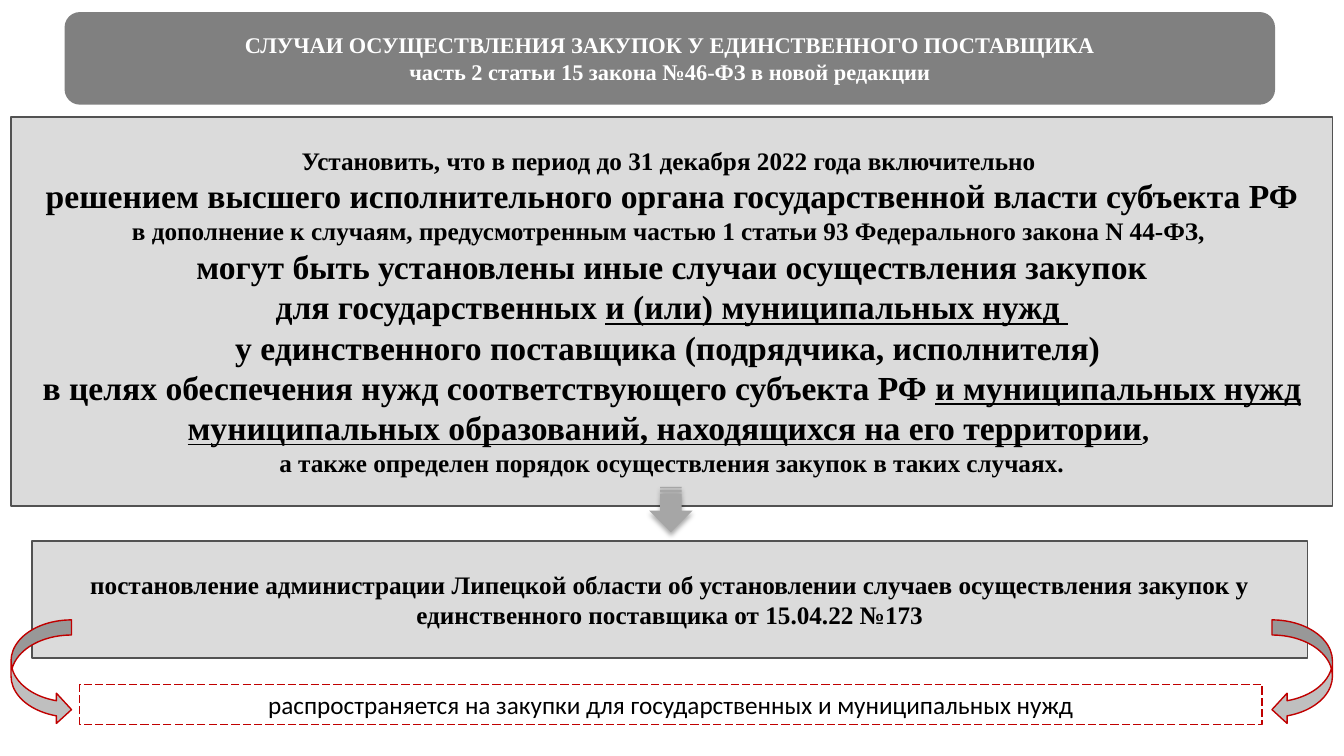
from lxml.etree import SubElement
from pptx import Presentation
from pptx.dml.color import RGBColor
from pptx.enum.dml import MSO_LINE
from pptx.enum.shapes import MSO_SHAPE as Shape
from pptx.enum.text import MSO_ANCHOR, MSO_AUTO_SIZE, PP_ALIGN
from pptx.oxml.ns import qn
from pptx.util import Pt

# Content: paragraphs of (text, size name, underlined) runs
TITLE = [
    [("СЛУЧАИ ОСУЩЕСТВЛЕНИЯ ЗАКУПОК У ЕДИНСТВЕННОГО ПОСТАВЩИКА", "title", False)],
    [("часть 2 статьи 15 закона №46-ФЗ в новой редакции", "title", False)],
]
RULE = [
    [("Установить, что в период до 31 декабря 2022 года включительно ", "body", False)],
    [("решением высшего исполнительного органа государственной власти субъекта РФ", "key", False)],
    [("в дополнение к случаям, предусмотренным частью 1 статьи 93 Федерального закона N 44-ФЗ, ",
      "body", False)],
    [("могут быть установлены иные случаи осуществления закупок", "key", False)],
    [("для государственных ", "key", False), ("и (или) муниципальных нужд ", "key", True)],
    [("у единственного поставщика (подрядчика, исполнителя) ", "key", False)],
    [("в целях обеспечения нужд соответствующего субъекта РФ ", "key", False),
     ("и муниципальных нужд муниципальных образований, находящихся на его территории", "key", True),
     (", ", "comma", False)],
    [("а также определен порядок осуществления закупок в таких случаях.", "body", False)],
]
DECREE = [[("постановление администрации Липецкой области об установлении случаев осуществления "
            "закупок у единственного поставщика от 15.04.22 №173", "body", False)]]
SCOPE = [[("распространяется на закупки для государственных и муниципальных нужд", "body", False)]]

THEME = {
    "serif": "Times New Roman", "sans": "Calibri",
    "title": 16, "body": 18, "comma": 20, "key": 24,
    "black": "000000", "white": "FFFFFF", "banner": "808080", "panel": "DBDBDB",
    "edge": "525252", "arrow": "A6A6A6", "curve": "BFBFBF", "accent": "C00000",
}

# Layout in points
W, H = 960, 540
MID = W / 2 - 0.8
RULE_BOX = (7.9, 83.5, 943.9, 277.9)
TITLE_BOX = (46.1, 8.6, 864.7, 66.2)
DECREE_BOX = (23, 386.6, 910.8, 83.5)
SCOPE_BOX = (56.9, 488.9, 844.6, 28.8)
DOWN_W, DOWN_H = 32.4, 31
DOWN_BOX = (MID - DOWN_W / 2, 364 - DOWN_H / 2, DOWN_W, DOWN_H)
CURVE_TOP, CURVE_W, CURVE_H = 442.8, 43.2, 74.9
CURVES = [(Shape.CURVED_RIGHT_ARROW, RULE_BOX[0]),
          (Shape.CURVED_LEFT_ARROW, RULE_BOX[0] + RULE_BOX[2] - CURVE_W)]


def color(name):
    return RGBColor.from_string(THEME[name])


def add_box(s, kind, box, fill=None, line=None, width=1):
    sp = s.shapes.add_shape(kind, *(Pt(v) for v in box))
    sp.shadow.inherit = False
    for part, name in ((sp.fill, fill), (sp.line.fill, line)):
        if name:
            part.solid()
            part.fore_color.rgb = color(name)
        else:
            part.background()
    if line:
        sp.line.width = Pt(width)
    return sp


def write(sp, paragraphs, ink="black", font="serif", bold=True, anchor=MSO_ANCHOR.MIDDLE):
    tf = sp.text_frame
    tf.word_wrap = True
    tf.vertical_anchor = anchor
    for i, runs in enumerate(paragraphs):
        p = tf.add_paragraph() if i else tf.paragraphs[0]
        p.alignment = PP_ALIGN.CENTER
        for text, size, underline in runs:
            r = p.add_run()
            r.text = text
            r.font.color.rgb = color(ink)
            style = {"name": THEME[font], "size": Pt(THEME[size]),
                     "bold": bold, "underline": underline}
            for key, value in style.items():
                setattr(r.font, key, value)


def cast_shadow(sp):
    effects = sp._element.spPr.find(qn("a:effectLst"))
    shadow = SubElement(effects, qn("a:outerShdw"), blurRad=str(Pt(3.5)), dist=str(Pt(2.2)),
                        dir="5400000", rotWithShape="0")
    tint = SubElement(shadow, qn("a:srgbClr"), val=THEME["black"])
    SubElement(tint, qn("a:alpha"), val="32000")


def main():
    prs = Presentation()
    prs.slide_width, prs.slide_height = Pt(W), Pt(H)
    s = prs.slides.add_slide(prs.slide_layouts[6])

    # Rule panel and title banner
    write(add_box(s, Shape.FLOWCHART_PROCESS, RULE_BOX, "panel", "edge"), RULE)
    write(add_box(s, Shape.ROUNDED_RECTANGLE, TITLE_BOX, "banner"), TITLE, ink="white")

    # Arrow down to the decree
    down = add_box(s, Shape.STRIPED_RIGHT_ARROW, DOWN_BOX, "arrow")
    down.rotation = 90
    cast_shadow(down)
    write(add_box(s, Shape.FLOWCHART_PROCESS, DECREE_BOX, "panel", "edge"), DECREE)

    # Curved arrows on both sides
    for kind, left in CURVES:
        add_box(s, kind, (left, CURVE_TOP, CURVE_W, CURVE_H), "curve", "accent")

    # Dashed scope box
    scope = add_box(s, Shape.RECTANGLE, SCOPE_BOX, line="accent", width=0.75)
    scope.line.dash_style = MSO_LINE.LONG_DASH
    write(scope, SCOPE, font="sans", bold=False, anchor=MSO_ANCHOR.TOP)
    scope.text_frame.auto_size = MSO_AUTO_SIZE.SHAPE_TO_FIT_TEXT

    prs.save("out.pptx")


if __name__ == "__main__":
    main()
